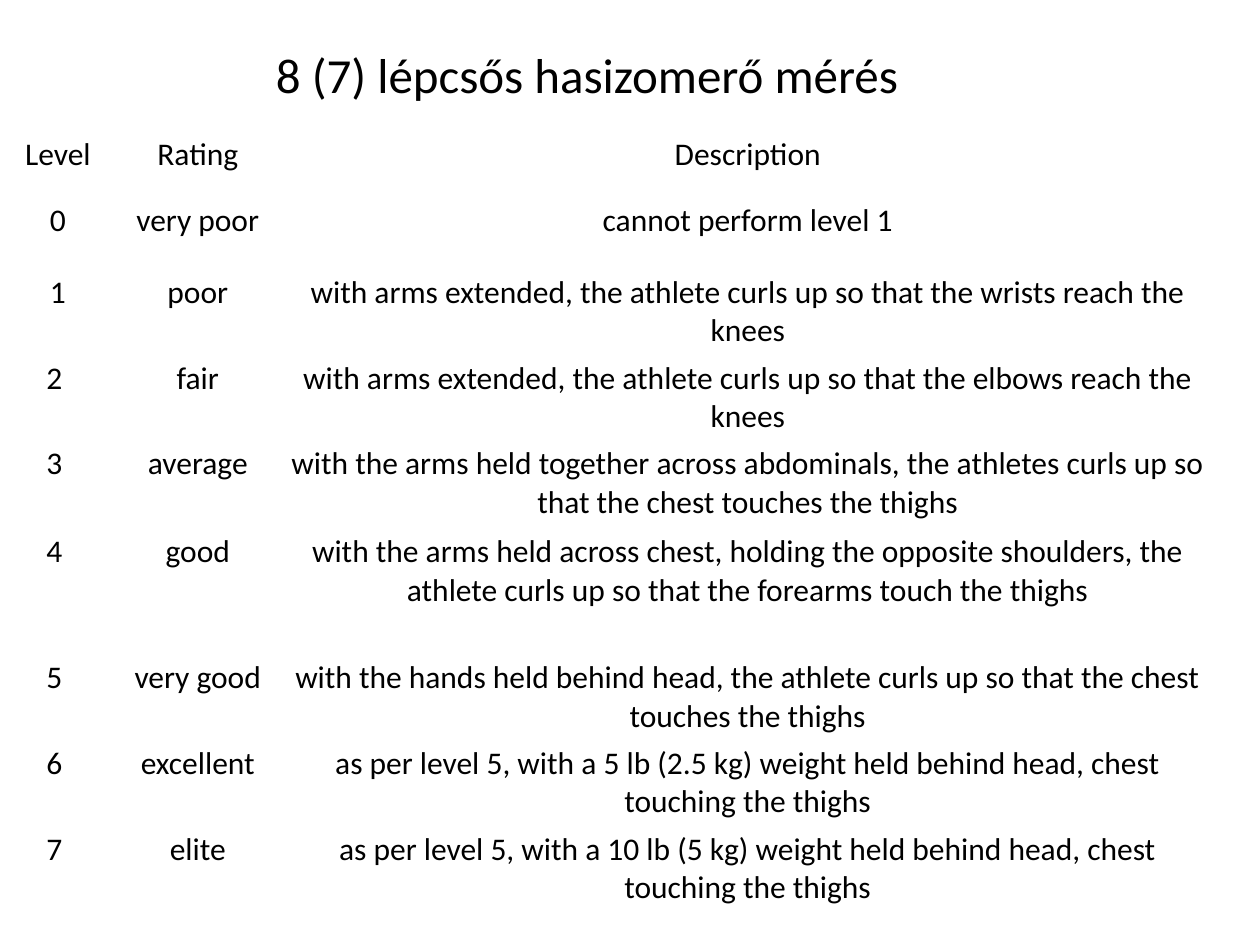
import pptx
import pptx.dml.color
import pptx.enum.text
import pptx.util

Inches = pptx.util.Inches
Pt = pptx.util.Pt
Align = pptx.enum.text.PP_ALIGN
Anchor = pptx.enum.text.MSO_ANCHOR

BLACK = pptx.dml.color.RGBColor(0x00, 0x00, 0x00)
WHITE = pptx.dml.color.RGBColor(0xFF, 0xFF, 0xFF)

COLUMN_WIDTHS = [0.92, 1.3, 7.43]
ROW_HEIGHTS = [0.7, 0.57, 0.68, 0.68, 0.7, 1, 0.68, 0.68, 0.68]
LEVELS = [
    ("Level", "Rating", "Description"),
    ("0", "very poor", "cannot perform level 1"),
    ("1", "poor", "with arms extended, the athlete curls up so that the wrists reach the knees"),
    ("2 ", "fair", "with arms extended, the athlete curls up so that the elbows reach the knees"),
    ("3 ", "average", "with the arms held together across abdominals, the athletes curls up so "
     "that the chest touches the thighs"),
    ("4 ", "good", "with the arms held across chest, holding the opposite shoulders, the "
     "athlete curls up so that the forearms touch the thighs"),
    ("5 ", "very good", "with the hands held behind head, the athlete curls up so that the chest "
     "touches the thighs"),
    ("6 ", "excellent", "as per level 5, with a 5 lb (2.5 kg) weight held behind head, chest "
     "touching the thighs"),
    ("7 ", "elite", "as per level 5, with a 10 lb (5 kg) weight held behind head, chest "
     "touching the thighs"),
]


def apply_format(target, values):
    for name, value in values.items():
        setattr(target, name, value)


class SlideBuilder:
    font_name = "Calibri"
    cell_format = {
        "margin_left": Inches(0.04),
        "margin_right": Inches(0.04),
        "margin_top": Inches(0.02),
        "margin_bottom": Inches(0.02),
    }

    def __init__(self, slide):
        self.slide = slide
        slide.background.fill.solid()
        slide.background.fill.fore_color.rgb = WHITE

    def fill_paragraph(self, paragraph, text, size, alignment):
        paragraph.text = text
        paragraph.alignment = alignment
        font = paragraph.runs[0].font
        apply_format(font, {"name": self.font_name, "size": Pt(size), "bold": False})
        font.color.rgb = BLACK

    def add_title(self, text, left, top, width, height):
        title = self.slide.shapes.title
        apply_format(title, {
            "left": Inches(left), "top": Inches(top),
            "width": Inches(width), "height": Inches(height),
        })
        apply_format(title.text_frame, {
            "word_wrap": False,
            "vertical_anchor": Anchor.TOP,
            "auto_size": pptx.enum.text.MSO_AUTO_SIZE.SHAPE_TO_FIT_TEXT,
        })
        self.fill_paragraph(title.text_frame.paragraphs[0], text, 28, Align.LEFT)

    def add_table(self, rows, left, top, widths, heights):
        table = self.slide.shapes.add_table(
            len(rows), len(widths), Inches(left), Inches(top),
            Inches(sum(widths)), Inches(sum(heights))).table
        apply_format(table, {"first_row": False, "horz_banding": False})
        for column, width in zip(table.columns, widths):
            column.width = Inches(width)
        for row_index, (row, height, texts) in enumerate(zip(table.rows, heights, rows)):
            row.height = Inches(height)
            anchor = Anchor.MIDDLE if row_index == 0 else Anchor.TOP
            for cell, text in zip(row.cells, texts):
                apply_format(cell, {**self.cell_format, "vertical_anchor": anchor})
                cell.fill.background()
                self.fill_paragraph(cell.text_frame.paragraphs[0], text, 18, Align.CENTER)


def main():
    presentation = pptx.Presentation()
    apply_format(presentation, {"slide_width": Inches(10), "slide_height": Inches(7.5)})
    builder = SlideBuilder(presentation.slides.add_slide(presentation.slide_layouts[5]))
    builder.add_title("8 (7) lépcsős hasizomerő mérés", 2.09, 0.3, 5.2, 0.57)
    builder.add_table(LEVELS, 0, 0.88, COLUMN_WIDTHS, ROW_HEIGHTS)
    presentation.save("out.pptx")


if __name__ == "__main__":
    main()
